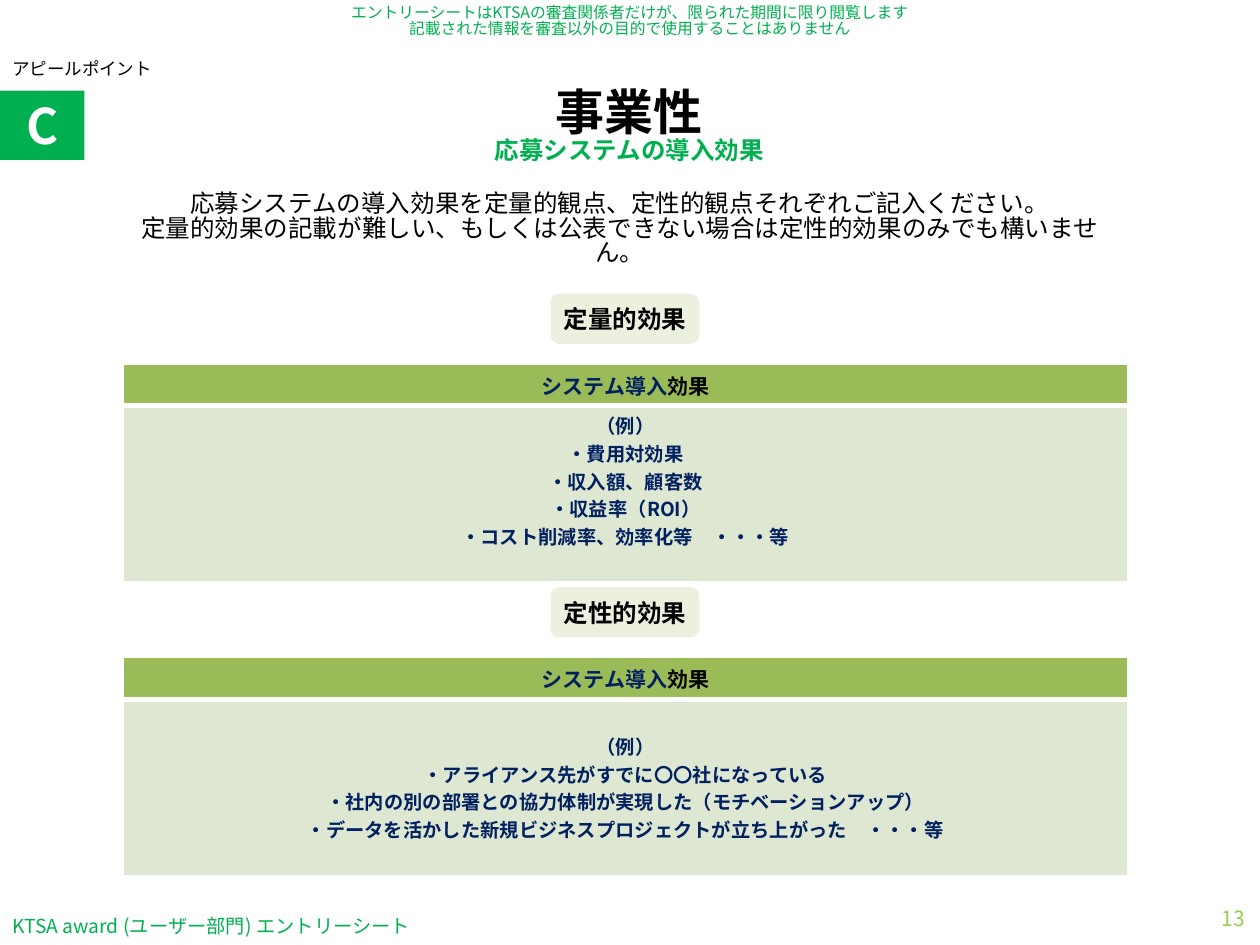
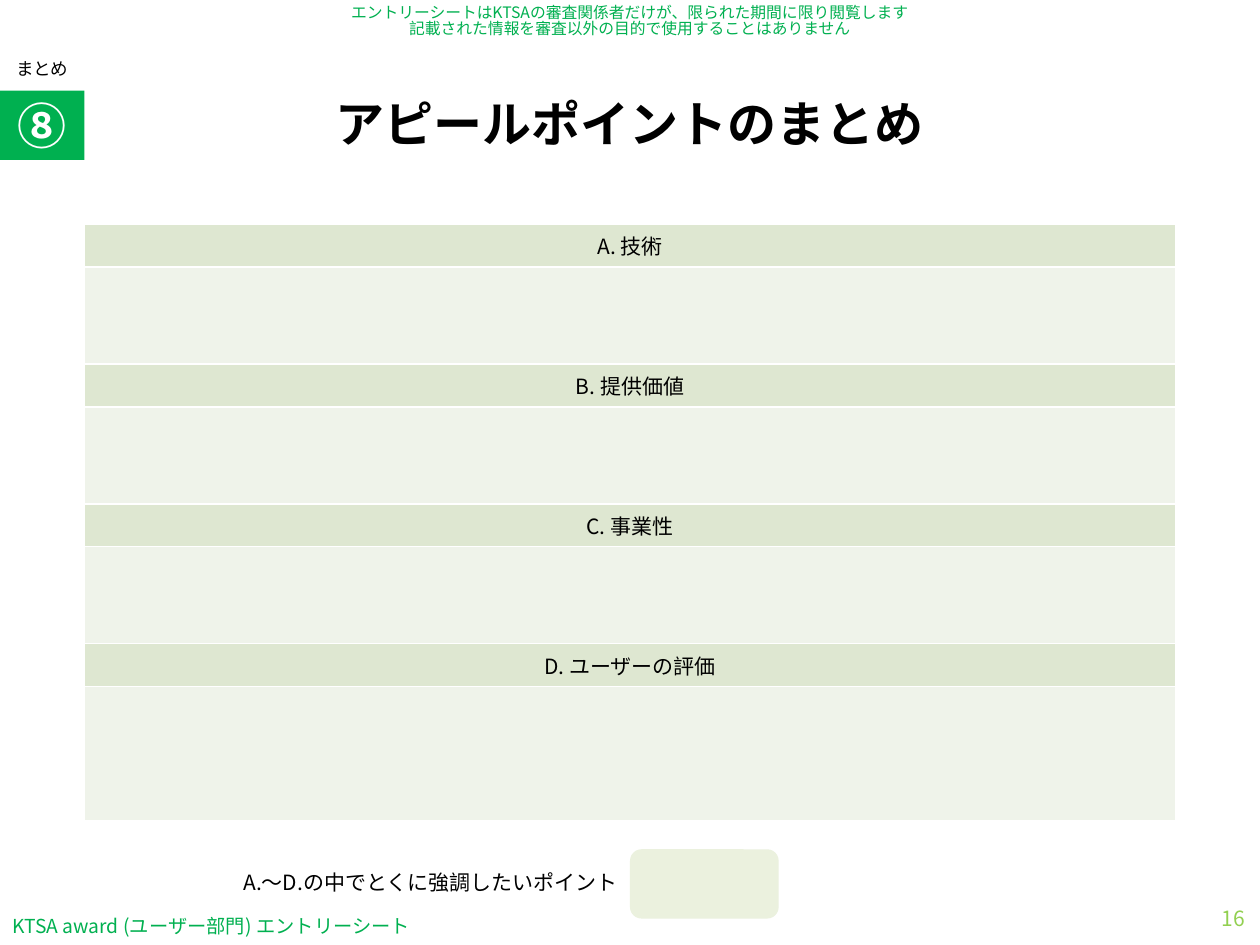
from lxml import etree
from pptx import Presentation
from pptx.dml.color import RGBColor
from pptx.enum import shapes, text
from pptx.oxml import ns
from pptx.util import Inches, Pt

FONT = "Noto Sans CJK JP"
BLACK = RGBColor(0x00, 0x00, 0x00)
WHITE = RGBColor(0xFF, 0xFF, 0xFF)
GREEN = RGBColor(0x00, 0xB0, 0x50)
LIME = RGBColor(0x92, 0xD0, 0x50)
OLIVE = RGBColor(0x9B, 0xBB, 0x59)
PILL = RGBColor(0xEB, 0xF1, 0xDE)
SAGE = RGBColor(0xDE, 0xE7, 0xD1)
PALE = RGBColor(0xEF, 0xF3, 0xEA)
NAVY = RGBColor(0x00, 0x20, 0x60)

LEFT, CENTER, RIGHT = text.PP_ALIGN.LEFT, text.PP_ALIGN.CENTER, text.PP_ALIGN.RIGHT
TOP, MIDDLE = text.MSO_ANCHOR.TOP, text.MSO_ANCHOR.MIDDLE
RECTANGLE = shapes.MSO_SHAPE.RECTANGLE
ROUNDED = shapes.MSO_SHAPE.ROUNDED_RECTANGLE
PROCESS = shapes.MSO_SHAPE.FLOWCHART_ALTERNATE_PROCESS


class EntrySheet:
    """Draws the entry sheet's styled elements on the current slide."""

    def __init__(self):
        self.presentation = Presentation()
        self.presentation.slide_width = Inches(10)
        self.presentation.slide_height = Inches(7.5)
        self.slide = None

    def style(self, run, size, color, bold=False):
        run.font.size = Pt(size)
        run.font.bold = bold
        run.font.color.rgb = color
        run.font.name = FONT
        east_asian = etree.SubElement(run.font._element, ns.qn("a:ea"))
        east_asian.set("typeface", FONT)

    def fill_text(self, frame, content, size, color=BLACK, bold=False, align=CENTER, spacing=1.0):
        frame.text = content
        for paragraph in frame.paragraphs:
            paragraph.alignment = align
            paragraph.line_spacing = spacing
            for run in paragraph.runs:
                self.style(run, size, color, bold)

    def label(self, box, content, size, color=BLACK, bold=False, align=CENTER, anchor=MIDDLE):
        frame = self.slide.shapes.add_textbox(*map(Inches, box)).text_frame
        frame.word_wrap = True
        frame.vertical_anchor = anchor
        self.fill_text(frame, content, size, color, bold, align, 0.83)
        return frame

    def block(self, kind, box, fill, content="", size=14, color=BLACK):
        shape = self.slide.shapes.add_shape(kind, *map(Inches, box))
        shape.shadow.inherit = False
        shape.fill.solid()
        shape.fill.fore_color.rgb = fill
        shape.line.fill.background()
        if content:
            frame = shape.text_frame
            frame.word_wrap = False
            frame.vertical_anchor = MIDDLE
            self.fill_text(frame, content, size, color, True)

    def border(self, cell, side, width):
        properties = cell._tc.get_or_add_tcPr()
        line = etree.Element(ns.qn(f"a:ln{side}"), w=str(Pt(width)))
        fill = etree.SubElement(line, ns.qn("a:solidFill"))
        etree.SubElement(fill, ns.qn("a:srgbClr"), val=str(WHITE))
        properties.insert("LRTB".index(side), line)

    def table(self, left, top, width, heights, fills, seam=1):
        frame = self.slide.shapes.add_table(
            len(heights), 1, Inches(left), Inches(top), Inches(width), Inches(sum(heights)))
        table = frame.table
        table.first_row = table.horz_banding = False
        cells = []
        for index, (height, fill) in enumerate(zip(heights, fills)):
            table.rows[index].height = Inches(height)
            cell = table.cell(index, 0)
            cell.fill.solid()
            cell.fill.fore_color.rgb = fill
            cell.vertical_anchor = MIDDLE
            cell.margin_top = cell.margin_bottom = Inches(0.04)
            widths = {"L": 1, "R": 1, "T": seam if index else 1,
                      "B": seam if index < len(heights) - 1 else 1}
            for side in "LRTB":
                self.border(cell, side, widths[side])
            cells.append(cell)
        return cells

    def start(self, section, section_width, section_align, badge, title, number):
        self.slide = self.presentation.slides.add_slide(self.presentation.slide_layouts[6])
        self.label((0, 7.23, 4, 0.27), "KTSA award (ユーザー部門) エントリーシート", 11, GREEN,
                   align=LEFT)
        self.label((2, 0, 5.99, 0.39),
                   "エントリーシートはKTSAの審査関係者だけが、限られた期間に限り閲覧します\v"
                   "記載された情報を審査以外の目的で使用することはありません", 9, GREEN, anchor=TOP)
        self.label((0, 0.44, section_width, 0.21), section, 10, align=section_align, anchor=TOP)
        self.block(RECTANGLE, (0, 0.72, 0.67, 0.55), GREEN, badge, 28, WHITE)
        self.label((9.25, 7.1, 0.73, 0.4), number, 12, LIME, align=RIGHT)
        return self.label((0.27, 0.62, 9.45, 0.79), title, 28, bold=True)

    def effect(self, top, heading, examples, bottom_margin):
        self.block(PROCESS, (4.37, top, 1.18, 0.4), PILL, heading)
        header, body = self.table(0.98, top + 0.56, 7.97, (0.33, 1.4), (OLIVE, SAGE), 3)
        self.fill_text(header.text_frame, "システム導入", 12, NAVY, True)
        ending = header.text_frame.paragraphs[0].add_run()
        ending.text = "効果"
        self.style(ending, 12, BLACK, True)
        body.margin_bottom = Inches(bottom_margin)
        self.fill_text(body.text_frame, "\n".join(["（例）", *examples]), 11, NAVY, True)


def build_business_slide(sheet):
    title = sheet.start("アピールポイント", 1.5, LEFT, "C", "事業性\v応募システムの導入効果", "13")
    subtitle = title.paragraphs[0].runs[1]
    subtitle.font.size = Pt(14)
    subtitle.font.color.rgb = GREEN
    sheet.label((0.98, 1.63, 7.88, 0.39),
                "応募システムの導入効果を定量的観点、定性的観点それぞれご記入ください。\n"
                "定量的効果の記載が難しい、もしくは公表できない場合は定性的効果のみでも構いません。", 14)
    sheet.effect(2.33, "定量的効果",
                 ["・費用対効果", "・収入額、顧客数", "・収益率（ROI）",
                  "・コスト削減率、効率化等　・・・等"], 0.26)
    sheet.effect(4.66, "定性的効果",
                 ["・アライアンス先がすでに〇〇社になっている",
                  "・社内の別の部署との協力体制が実現した（モチベーションアップ）",
                  "・データを活かした新規ビジネスプロジェクトが立ち上がった　・・・等"], 0.04)


def build_summary_slide(sheet):
    sheet.start("まとめ", 0.67, CENTER, "⑧", "アピールポイントのまとめ", "16")
    points = ["A. 技術", "B. 提供価値", "C. 事業性", "D. ユーザーの評価"]
    heights = [0.34, 0.77] * 3 + [0.34, 1.07]
    cells = sheet.table(0.67, 1.78, 8.66, heights, [SAGE, PALE] * len(points))
    for cell, point in zip(cells[::2], points):
        sheet.fill_text(cell.text_frame, point, 12)
    sheet.label((1.5, 6.82, 3.5, 0.39), "A.～D.の中でとくに強調したいポイント", 12, align=RIGHT)
    sheet.block(ROUNDED, (5, 6.74, 1.18, 0.55), PILL)


def main():
    sheet = EntrySheet()
    build_business_slide(sheet)
    build_summary_slide(sheet)
    sheet.presentation.save("out.pptx")


if __name__ == "__main__":
    main()
